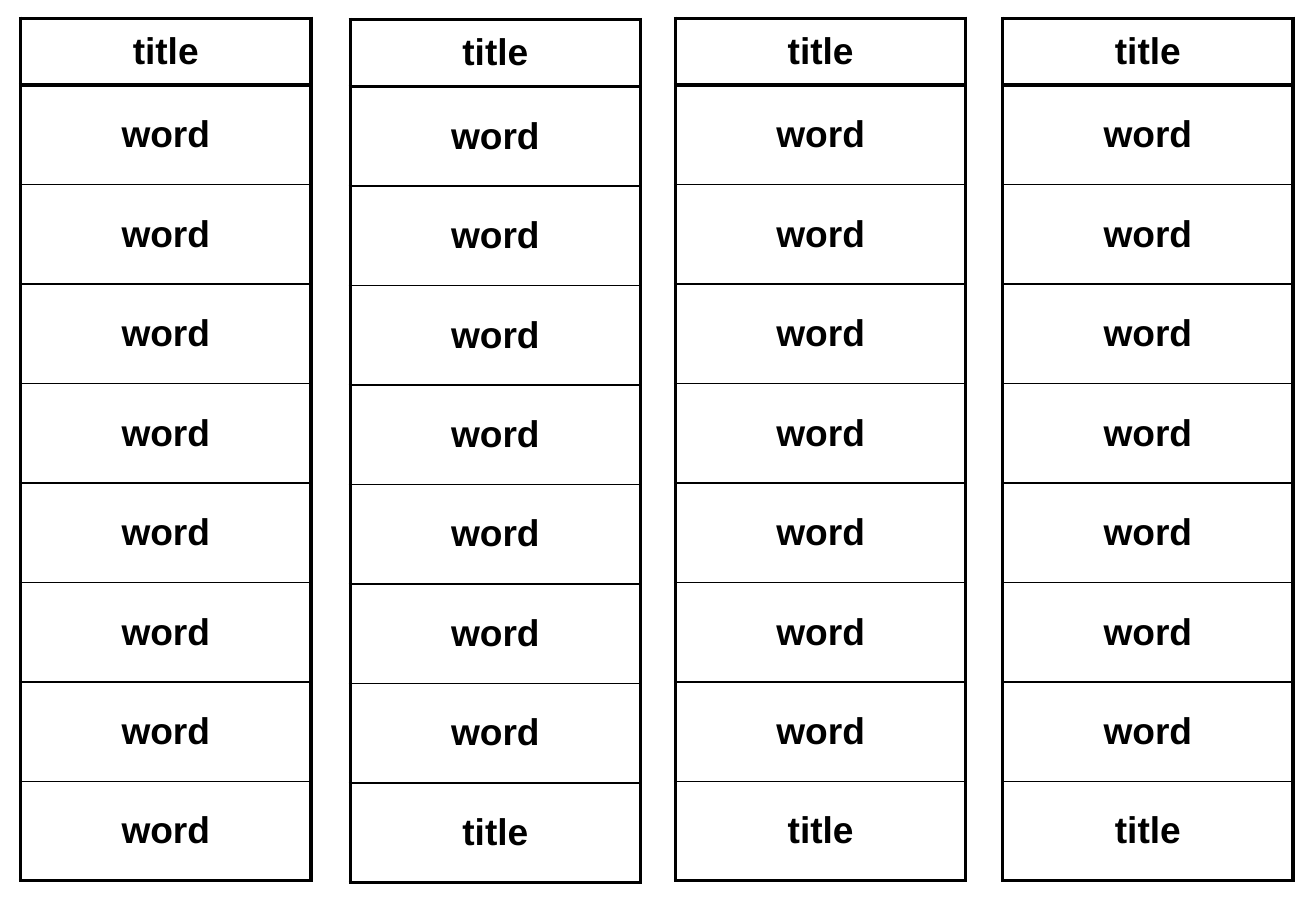
"""Build a slide with four bordered one-column word lists."""
from pptx import Presentation
from pptx.dml.color import RGBColor
from pptx.enum.text import MSO_ANCHOR as Anchor, PP_ALIGN as Align
from pptx.oxml import parse_xml
from pptx.oxml.ns import nsdecls
from pptx.util import Cm, Pt

BLACK, WHITE = "000000", "FFFFFF"
THICK, THIN = 2.25, 1


def color(code):
    return RGBColor.from_string(code)


def border(cell, side, width):
    cell._tc.get_or_add_tcPr().append(parse_xml(
        f'<a:ln{side} {nsdecls("a")} w="{Pt(width)}"><a:solidFill>'
        f'<a:srgbClr val="{BLACK}"/></a:solidFill></a:ln{side}>'))


deck = Presentation()
deck.slide_width, deck.slide_height = Cm(27.51), Cm(19.05)
slide = deck.slides.add_slide(deck.slide_layouts[6])

wide, head, step = 6.07, 1.4, 2.08
count = 8
lists = [(0.43, 0.38, "word"), (7.32, 0.41, "title"),
         (14.12, 0.38, "title"), (20.96, 0.38, "title")]

for left, top, last in lists:
    words = ["title"] + ["word"] * (count - 1) + [last]
    frame = slide.shapes.add_table(
        len(words), 1, Cm(left), Cm(top), Cm(wide), Cm(head + count * step))
    table = frame.table
    table.first_row = table.horz_banding = False
    for row, word in enumerate(words):
        table.rows[row].height = Cm(step if row else head)
        cell = table.cell(row, 0)
        cell.vertical_anchor = Anchor.MIDDLE
        border(cell, "L", THICK)
        border(cell, "R", THICK)
        border(cell, "T", THICK if row < 2 else THIN)
        border(cell, "B", THICK if row in (0, count) else THIN)
        if row > 5:
            cell.fill.solid()
            cell.fill.fore_color.rgb = color(WHITE)
        else:
            cell.fill.background()
        cell.text_frame.text = word
        para = cell.text_frame.paragraphs[0]
        para.alignment = Align.CENTER
        font = para.runs[0].font
        font.name, font.size, font.bold = "Arial", Pt(22), True
        font.color.rgb = color(BLACK)

deck.save("out.pptx")
